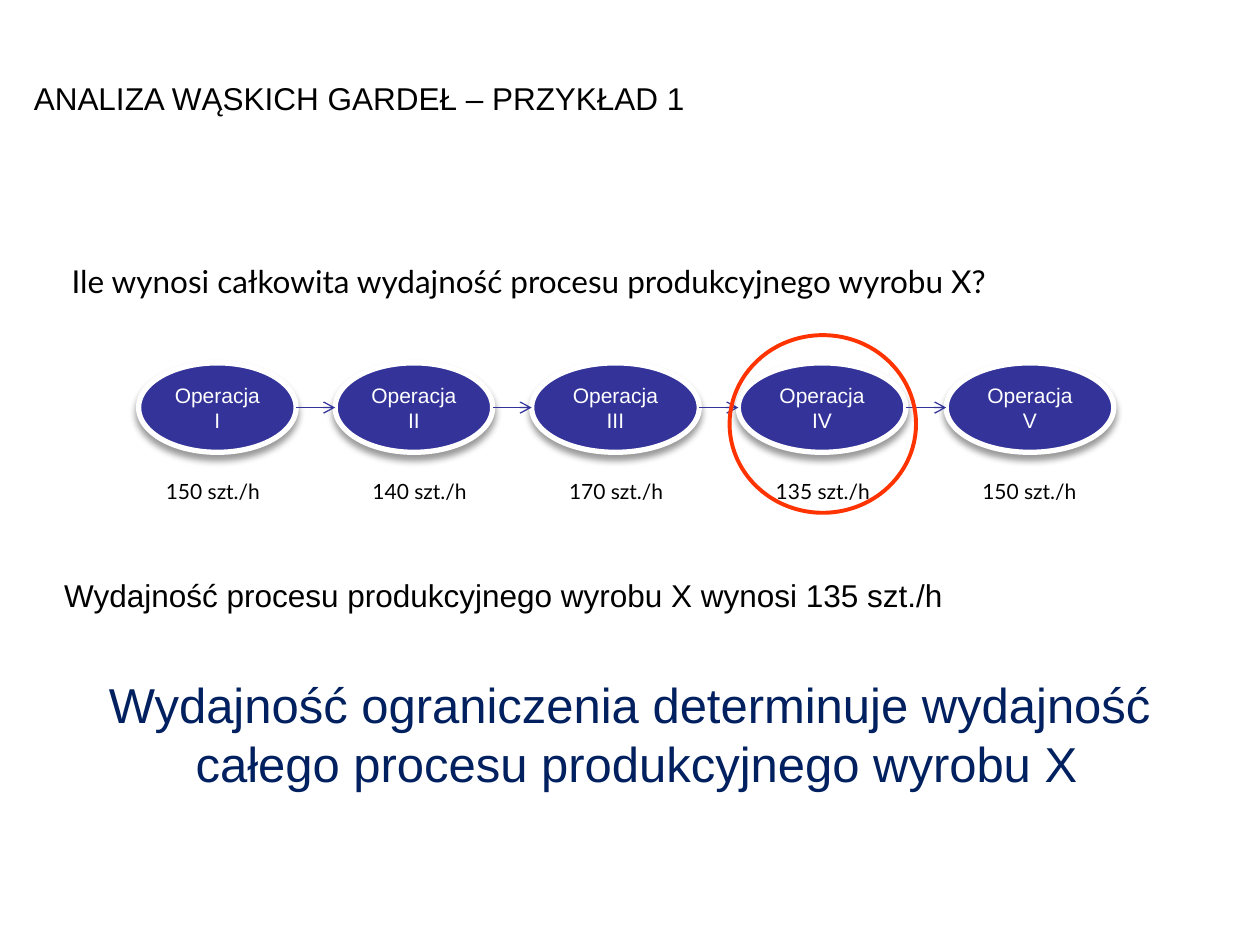
import pptx
import pptx.util
import pptx.dml.color
import pptx.enum.shapes
import pptx.enum.text
import pptx.oxml
import pptx.oxml.ns
from pptx.util import Inches

ALIGN = pptx.enum.text.PP_ALIGN
ANCHOR = pptx.enum.text.MSO_ANCHOR
FIT = pptx.enum.text.MSO_AUTO_SIZE
OVAL = pptx.enum.shapes.MSO_SHAPE.OVAL
STRAIGHT = pptx.enum.shapes.MSO_CONNECTOR.STRAIGHT
NS = pptx.oxml.ns.nsdecls("a")
SHADOW = (
    f'<a:effectLst {NS}><a:outerShdw blurRad="50800" dist="38100" dir="5400000" '
    'rotWithShape="0"><a:srgbClr val="000000"><a:alpha val="40000"/></a:srgbClr>'
    "</a:outerShdw></a:effectLst>"
)


def color(code):
    return pptx.dml.color.RGBColor.from_string(code)


def write(frame, text, size=18, font="Arial", ink="000000", align=ALIGN.LEFT):
    frame.word_wrap = True
    frame.text = text
    para = frame.paragraphs[0]
    para.alignment = align
    for run in para.runs:
        run.font.size = pptx.util.Pt(size)
        run.font.name = font
        run.font.color.rgb = color(ink)


class Board:
    blue, white, red, navy = "333399", "FFFFFF", "FF3300", "002060"

    def __init__(self, deck):
        self.slide = deck.slides.add_slide(deck.slide_layouts[6])
        self.shapes = self.slide.shapes

    def label(self, x, y, w, h, text, **style):
        frame = self.shapes.add_textbox(*map(Inches, (x, y, w, h))).text_frame
        write(frame, text, **style)
        frame.auto_size = FIT.SHAPE_TO_FIT_TEXT

    def note(self, x, y, w, h, text, **style):
        frame = self.shapes.add_textbox(*map(Inches, (x, y, w, h))).text_frame
        frame.margin_left = frame.margin_right = 0
        frame.margin_top = frame.margin_bottom = 0
        frame.vertical_anchor = ANCHOR.MIDDLE
        write(frame, text, **style)

    def oval(self, x, y, w, h, line, width, fill=None):
        shape = self.shapes.add_shape(OVAL, *map(Inches, (x, y, w, h)))
        shape.shadow.inherit = False
        if fill:
            shape.fill.solid()
            shape.fill.fore_color.rgb = color(fill)
        else:
            shape.fill.background()
        shape.line.color.rgb = color(line)
        shape.line.width = pptx.util.Pt(width)
        return shape

    def step(self, x, y, w, h, text):
        shape = self.oval(x, y, w, h, self.white, 3, self.blue)
        props = shape._element.spPr
        props.remove(props.find(pptx.oxml.ns.qn("a:effectLst")))
        props.append(pptx.oxml.parse_xml(SHADOW))
        shape.text_frame.vertical_anchor = ANCHOR.MIDDLE
        write(shape.text_frame, text, size=12, ink=self.white, align=ALIGN.CENTER)

    def arrow(self, start, end, y):
        link = self.shapes.add_connector(STRAIGHT, *map(Inches, (start, y, end, y)))
        link.line.color.rgb = color(self.blue)
        link.line.width = pptx.util.Pt(0.75)
        link.line._get_or_add_ln().append(
            pptx.oxml.parse_xml(f'<a:tailEnd {NS} type="arrow"/>'))
        link._element.spPr.append(pptx.oxml.parse_xml(f"<a:effectLst {NS}/>"))


def main():
    deck = pptx.Presentation()
    deck.slide_width, deck.slide_height = Inches(10), Inches(7.5)
    board = Board(deck)

    # Title and question
    board.label(0.17, 0.58, 7.83, 0.4, "ANALIZA WĄSKICH GARDEŁ – PRZYKŁAD 1")
    board.label(0.47, 2.03, 9.11, 0.4, font="Lato",
                text="Ile wynosi całkowita wydajność procesu produkcyjnego wyrobu X?")

    # Process steps: number, left, width, rate, left of rate
    steps = [
        ("I", 1.1, 1.25, 150, 1.18),
        ("II", 2.66, 1.25, 140, 2.82),
        ("III", 4.22, 1.33, 170, 4.38),
        ("IV", 5.86, 1.33, 135, 6.02),
        ("V", 7.51, 1.33, 150, 7.66),
    ]
    top, high = 2.88, 0.71
    for num, left, wide, rate, spot in steps:
        board.step(left, top, wide, high, f"Operacja {num}")
        board.label(spot, 3.75, 1.02, 0.3, f"{rate} szt./h",
                    size=12, font="Lato", align=ALIGN.CENTER)

    # Arrows between neighbouring steps
    for here, after in zip(steps, steps[1:]):
        board.arrow(here[1] + here[2], after[1], top + high / 2)

    # Ring around the bottleneck
    board.oval(5.79, 2.66, 1.48, 1.41, board.red, 2.25)

    # Answer and conclusion
    board.note(0.51, 4.45, 8.4, 0.55,
               "Wydajność procesu produkcyjnego wyrobu X wynosi 135 szt./h")
    board.note(0.1, 5.31, 9.9, 1.02, size=28, ink=board.navy, align=ALIGN.CENTER,
               text="Wydajność ograniczenia determinuje wydajność \v"
                    "całego procesu produkcyjnego wyrobu X")

    deck.save("out.pptx")


if __name__ == "__main__":
    main()
